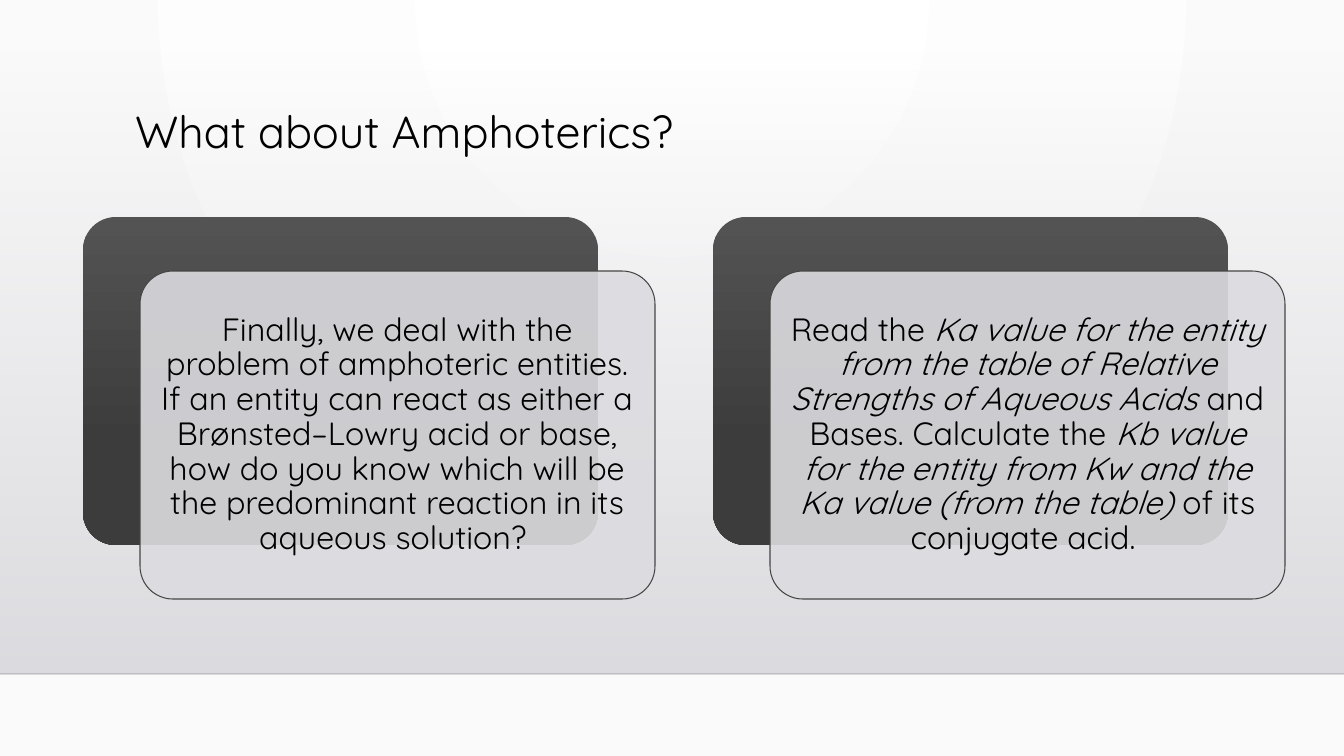
"""Build the slide about amphoteric entities."""
import pptx
import pptx.dml.color
import pptx.enum.shapes
import pptx.enum.text
import pptx.oxml
import pptx.oxml.ns
import pptx.util

SLIDE_WIDTH, SLIDE_HEIGHT = 1344, 756
SCALE = 12192000 / SLIDE_WIDTH
FONT = "Quicksand"
CARD_WIDTH, CARD_HEIGHT = 515, 328
CARD_LEFT, CARD_TOP, CARD_PITCH = 83, 217, 630
FRONT_SHIFT_X, FRONT_SHIFT_Y = 57, 54
DARK_STOPS = [(0, "535353", 100), (69, "3C3C3C", 100), (100, "393939", 100)]
DOWNWARD = '<a:lin ang="5400000" scaled="0"/>'
SPOTLIGHT = '<a:path path="circle"><a:fillToRect l="43000" r="43000" b="100000"/></a:path>'
CARD_TEXTS = [
    [("Finally, we deal with the problem of amphoteric entities. If an entity can react "
      "as either a Brønsted–Lowry acid or base, how do you know which will be the "
      "predominant reaction in its aqueous solution? ", False)],
    [("Read the ", False),
     ("Ka value for the entity from the table of Relative Strengths of Aqueous Acids ", True),
     ("and Bases. Calculate the ", False),
     ("Kb value for the entity from Kw and the Ka value (from the table) ", True),
     ("of its conjugate acid. ", False)],
]


def px(length):
    """Turn pixels into EMU."""
    return pptx.util.Emu(round(length * SCALE))


def color(value):
    """Turn a hex string into a colour."""
    return pptx.dml.color.RGBColor.from_string(value)


def set_gradient(fill, element, stops, direction):
    """Give a fill its stops of position, colour and opacity."""
    fill.gradient()
    stop_xml = "".join(
        f'<a:gs pos="{position * 1000}"><a:srgbClr val="{value}">'
        f'<a:alpha val="{opacity * 1000}"/></a:srgbClr></a:gs>'
        for position, value, opacity in stops)
    gradient = pptx.oxml.parse_xml(
        f'<a:gradFill {pptx.oxml.ns.nsdecls("a")} rotWithShape="1">'
        f'<a:gsLst>{stop_xml}</a:gsLst>{direction}</a:gradFill>')
    current = element.find(".//" + pptx.oxml.ns.qn("a:gradFill"))
    current.getparent().replace(current, gradient)


def set_opacity(element, percent):
    """Set the opacity of the first plain colour in an element."""
    alpha = pptx.oxml.parse_xml(
        f'<a:alpha {pptx.oxml.ns.nsdecls("a")} val="{percent * 1000}"/>')
    element.find(".//" + pptx.oxml.ns.qn("a:srgbClr")).append(alpha)


def add_block(slide, kind, left, top, width, height):
    """Add a preset shape without shadow or outline."""
    shape = slide.shapes.add_shape(kind, px(left), px(top), px(width), px(height))
    shape.shadow.inherit = False
    shape.line.fill.background()
    return shape


def add_backdrop(slide):
    """Draw the background, the shaded panel and its lower edge."""
    set_gradient(slide.background.fill, slide.element,
                 [(0, "FFFFFF", 100), (100, "FAFAFA", 100)], SPOTLIGHT)
    panel = add_block(slide, pptx.enum.shapes.MSO_SHAPE.RECTANGLE, 0, 51, SLIDE_WIDTH, 623)
    set_gradient(panel.fill, panel.element,
                 [(0, "DCDCE0", 0), (100, "DEDEE2", 100)], DOWNWARD)
    edge = slide.shapes.add_connector(
        pptx.enum.shapes.MSO_CONNECTOR.STRAIGHT, 0, px(674), px(SLIDE_WIDTH), px(674))
    edge.line.color.rgb = color("000001")
    edge.line.width = pptx.util.Pt(1)
    set_opacity(edge.element, 20)
    edge.element.spPr.append(
        pptx.oxml.parse_xml(f'<a:effectLst {pptx.oxml.ns.nsdecls("a")}/>'))


def format_paragraph(paragraph, size, alignment):
    """Set the font, alignment and line spacing of a paragraph."""
    paragraph.alignment = alignment
    paragraph.line_spacing = 0.9
    paragraph.font.name = FONT
    paragraph.font.size = pptx.util.Pt(size)
    paragraph.font.color.rgb = color("000000")


def add_title(slide, text):
    """Fill the title placeholder and bring it above the backdrop."""
    title = slide.shapes.title
    title.left, title.top, title.width, title.height = px(125), px(105), px(1058), px(116)
    frame = title.text_frame
    frame.text = text
    frame.vertical_anchor = pptx.enum.text.MSO_ANCHOR.TOP
    frame.auto_size = pptx.enum.text.MSO_AUTO_SIZE.NONE
    format_paragraph(frame.paragraphs[0], 32, pptx.enum.text.PP_ALIGN.LEFT)
    title.element.getparent().append(title.element)


def add_card(slide, left, top, runs):
    """Draw a dark card with a pale, shifted text card over it."""
    rounded = pptx.enum.shapes.MSO_SHAPE.ROUNDED_RECTANGLE
    back = add_block(slide, rounded, left, top, CARD_WIDTH, CARD_HEIGHT)
    set_gradient(back.fill, back.element, DARK_STOPS, DOWNWARD)
    front = add_block(slide, rounded, left + FRONT_SHIFT_X, top + FRONT_SHIFT_Y,
                      CARD_WIDTH, CARD_HEIGHT)
    front.fill.solid()
    front.fill.fore_color.rgb = color("DCDCE0")
    set_opacity(front.element, 90)
    front.line.color.rgb = color("454545")
    front.line.width = pptx.util.Pt(0.75)
    for shape in (back, front):
        shape.adjustments[0] = 0.1
    frame = front.text_frame
    frame.word_wrap = True
    frame.vertical_anchor = pptx.enum.text.MSO_ANCHOR.MIDDLE
    frame.margin_left = frame.margin_right = px(10)
    frame.margin_top = frame.margin_bottom = px(10)
    paragraph = frame.paragraphs[0]
    format_paragraph(paragraph, 23, pptx.enum.text.PP_ALIGN.CENTER)
    for text, italic in runs:
        run = paragraph.add_run()
        run.text = text
        run.font.italic = italic


def main():
    """Build and save the presentation."""
    presentation = pptx.Presentation()
    presentation.slide_width, presentation.slide_height = px(SLIDE_WIDTH), px(SLIDE_HEIGHT)
    slide = presentation.slides.add_slide(presentation.slide_layouts[5])
    add_backdrop(slide)
    add_title(slide, "What about Amphoterics?")
    for index, runs in enumerate(CARD_TEXTS):
        add_card(slide, CARD_LEFT + index * CARD_PITCH, CARD_TOP, runs)
    presentation.save("out.pptx")


if __name__ == "__main__":
    main()
